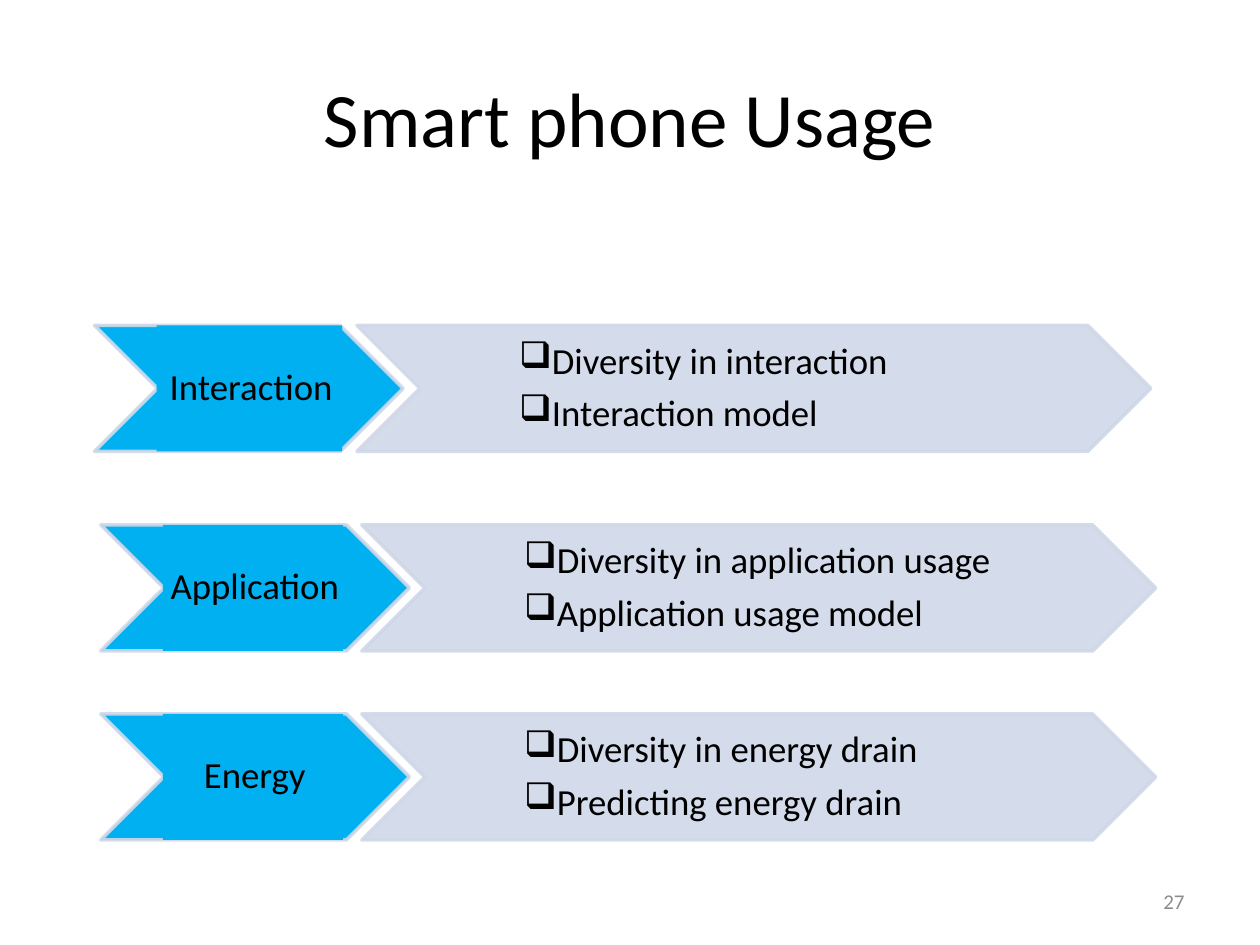
from lxml.etree import SubElement
from pptx import Presentation
from pptx.dml.color import RGBColor
from pptx.enum.shapes import MSO_SHAPE
from pptx.enum.text import MSO_ANCHOR, PP_ALIGN
from pptx.oxml.ns import qn
from pptx.util import Pt

COLORS = {"blue": "00B0F0", "pale": "D0D8E8", "text": "000000", "number": "8C8C8C"}
ROWS = [
    ("Interaction", ["Diversity in interaction", "Interaction model"], 54, 204, 186, 106),
    ("Application", ["Diversity in application usage", "Application usage model"], 57.6, 206.8, 300, 103),
    ("Energy", ["Diversity in energy drain", "Predicting energy drain"], 57.6, 206.8, 408, 103),
]
HEIGHT = 72
BLUE_WIDTH = 176.4
PALE_WIDTH = 453.6


def add_chevron(group, left, top, width, color, opacity):
    chevron = group.shapes.add_shape(MSO_SHAPE.CHEVRON, Pt(left), Pt(top), Pt(width), Pt(HEIGHT))
    chevron.shadow.inherit = False
    chevron.fill.solid()
    chevron.fill.fore_color.rgb = RGBColor.from_string(COLORS[color])
    chevron.line.color.rgb = RGBColor.from_string(COLORS["pale"])
    chevron.line.width = Pt(2)
    fill_color, line_color = chevron._element.spPr.iter(qn("a:srgbClr"))
    for element, percent in ((fill_color, opacity), (line_color, 90)):
        SubElement(element, qn("a:alpha"), val=str(percent * 1000))


def write_text(box, text, size, color, align):
    frame = box.text_frame
    frame.text = text
    frame.word_wrap = True
    frame.vertical_anchor = MSO_ANCHOR.MIDDLE
    for para in frame.paragraphs:
        para.alignment = align
        for span in para.runs:
            span.font.name = "Calibri"
            span.font.size = Pt(size)
            span.font.color.rgb = RGBColor.from_string(COLORS[color])


deck = Presentation()
deck.slide_width = Pt(720)
deck.slide_height = Pt(540)
page = deck.slides.add_slide(deck.slide_layouts[5])

title = page.shapes.title
title.left, title.top, title.width, title.height = Pt(36), Pt(21.6), Pt(648), Pt(90)
write_text(title, "Smart phone Usage", 44, "text", PP_ALIGN.CENTER)

for topic, points, blue_left, pale_left, top, label_width in ROWS:
    pale_group = page.shapes.add_group_shape()
    add_chevron(pale_group, pale_left, top, PALE_WIDTH, "pale", 90)
    details = pale_group.shapes.add_textbox(Pt(pale_left + 90.7), Pt(top), Pt(272), Pt(HEIGHT))
    write_text(details, "\n".join(points), 21, "text", PP_ALIGN.LEFT)
    for para in details.text_frame.paragraphs:
        SubElement(para._p.get_or_add_pPr(), qn("a:buChar"), char="❑")

    blue_group = page.shapes.add_group_shape()
    add_chevron(blue_group, blue_left, top, BLUE_WIDTH, "blue", 100)
    label = blue_group.shapes.add_shape(
        MSO_SHAPE.RECTANGLE, Pt(blue_left + HEIGHT / 2 - 0.5), Pt(top), Pt(label_width), Pt(HEIGHT))
    label.shadow.inherit = False
    label.fill.solid()
    label.fill.fore_color.rgb = RGBColor.from_string(COLORS["blue"])
    label.line.fill.background()
    write_text(label, topic, 21, "text", PP_ALIGN.CENTER)

    for box in (details, label):
        frame = box.text_frame
        frame.margin_left, frame.margin_right = Pt(2), Pt(0)
        frame.margin_top = frame.margin_bottom = Pt(1)
        for para in frame.paragraphs:
            para.line_spacing = 0.9
            para.space_after = Pt(7.35)

number = page.shapes.add_textbox(Pt(516), Pt(500.5), Pt(168), Pt(28.8))
write_text(number, "27", 12, "number", PP_ALIGN.RIGHT)

deck.save("out.pptx")
